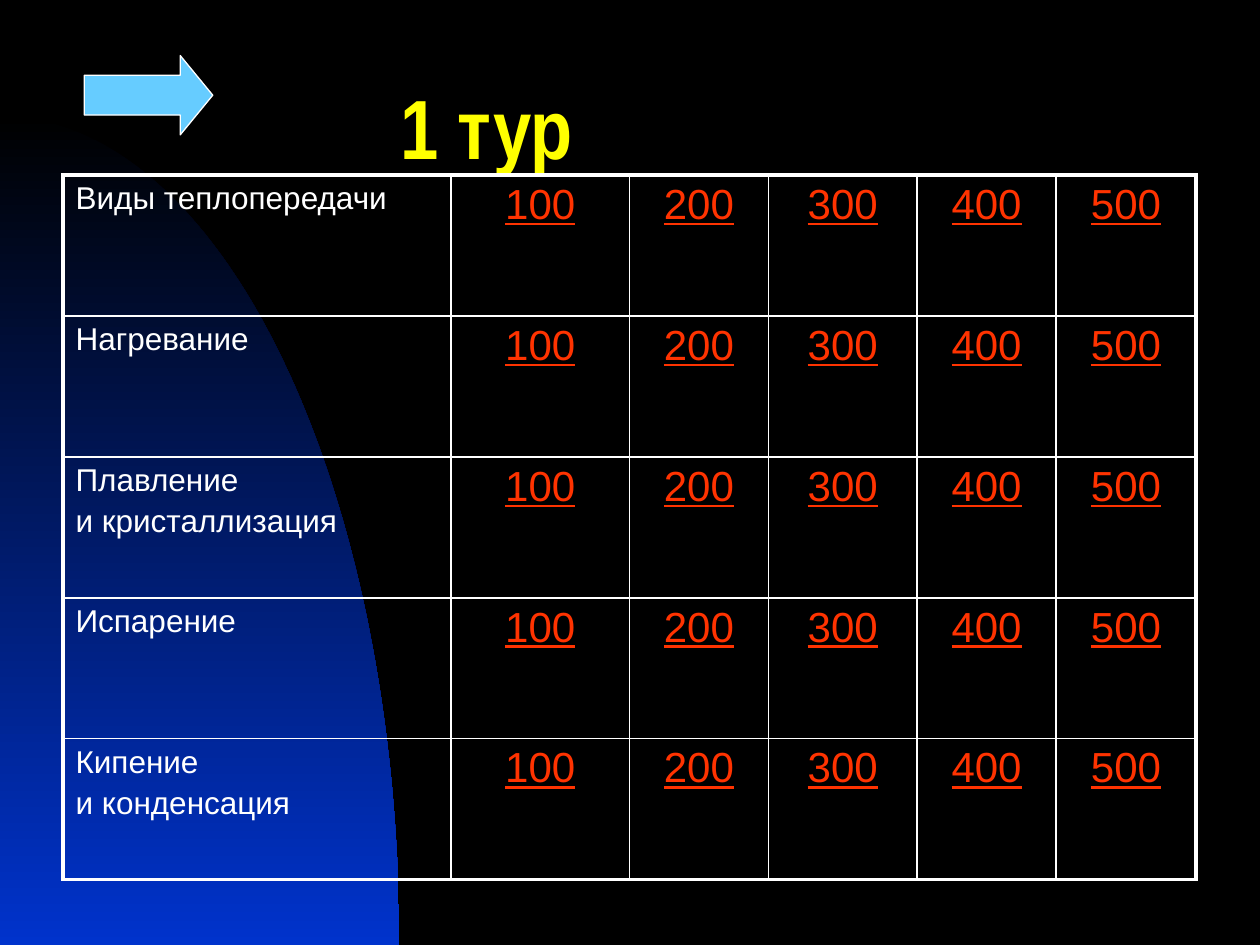
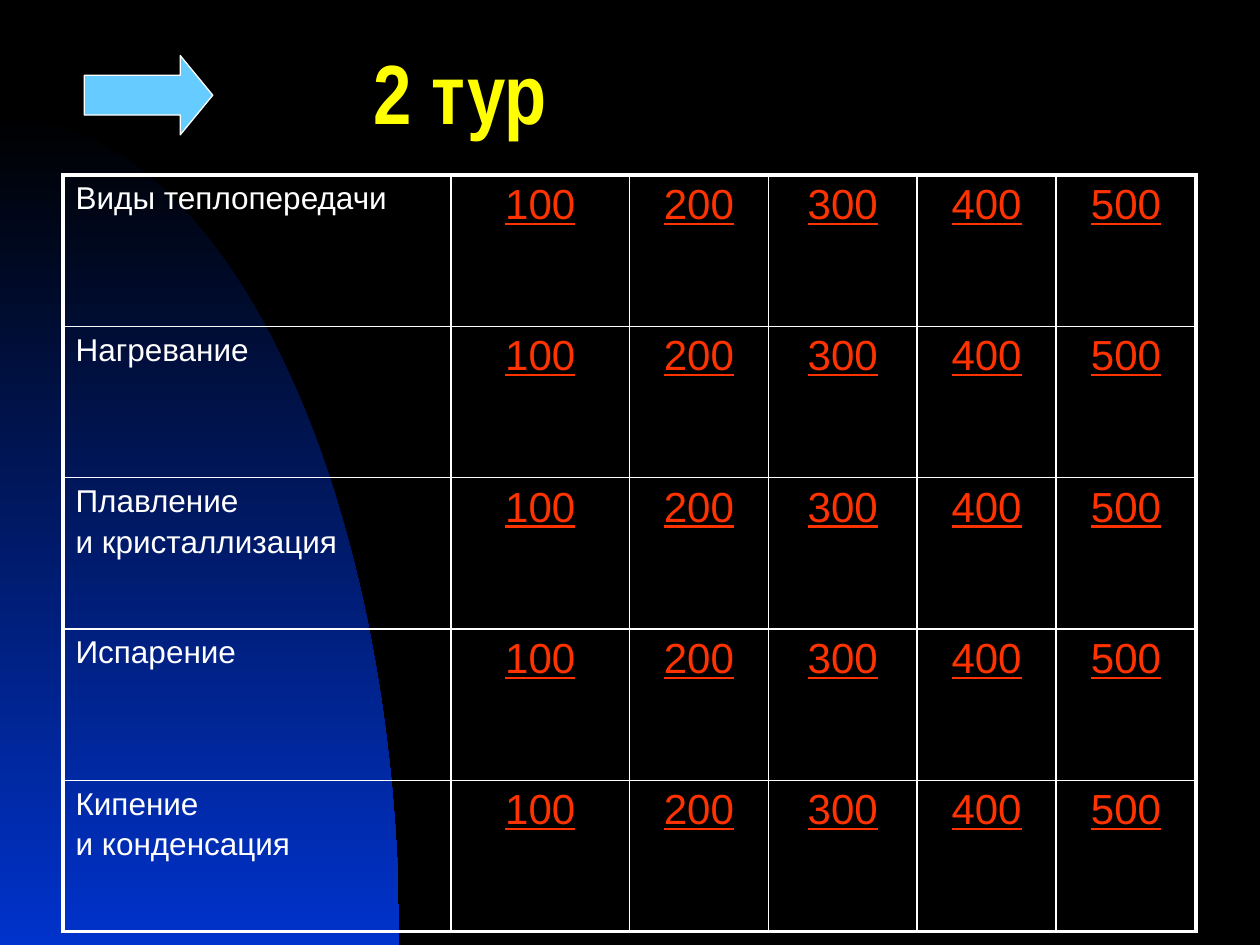
from math import cos, pi, sin

from lxml import etree
from pptx import Presentation
from pptx.dml.color import RGBColor
from pptx.enum.shapes import MSO_SHAPE
from pptx.enum.text import MSO_ANCHOR, PP_ALIGN
from pptx.oxml.ns import qn
from pptx.util import Cm, Pt

ARROW = MSO_SHAPE.RIGHT_ARROW
MIDDLE = MSO_ANCHOR.MIDDLE
LEFT, CENTER = PP_ALIGN.LEFT, PP_ALIGN.CENTER

# Shared look
BLACK, WHITE, BLUE = "000000", "FFFFFF", "0033CC"
YELLOW, RED, SKY = "FFFF00", "FF3300", "66CCFF"
WIDE, HIGH = 25.4, 19.05
THICK, THIN = 2.25, 1

# Game board
TOPICS = ["Виды теплопередачи", "Нагревание", "Плавление\nи кристаллизация",
          "Испарение", "Кипение\nи конденсация"]
PRICES = ["100", "200", "300", "400", "500"]
COLS = [7.82, 3.6, 2.8, 3, 2.8, 2.82]

# Round title, title box (left, top, height), table row height
ROUNDS = [("1 тур", (7.82, 1.7, 2.16), 2.84),
          ("2 тур", (7.29, 0.91, 2.36), 3.05)]


def rgb(code):
    return RGBColor.from_string(code)


def style(par, size, color, font, bold=False, under=False):
    for run in par.runs:
        face = run.font
        face.name, face.size = font, Pt(size)
        face.bold, face.underline = bold, under
        face.color.rgb = rgb(color)


def add_arc(slide):
    """Quarter ellipse rising from the bottom left corner."""
    top, width = 2.34, 8.05
    steps = 90
    turns = [pi / 2 * i / steps for i in range(steps + 1)]
    curve = [(Cm(width * sin(t)), Cm(HIGH - (HIGH - top) * cos(t)))
             for t in turns]
    pen = slide.shapes.build_freeform(*curve[0])
    pen.add_line_segments(curve[1:] + [(Cm(0), Cm(HIGH))], close=True)
    arc = pen.convert_to_shape()
    arc.shadow.inherit = False
    arc.line.fill.background()
    arc.fill.gradient()
    arc.fill.gradient_angle = 270
    for stop, code in zip(arc.fill.gradient_stops, (BLACK, BLUE)):
        stop.color.rgb = rgb(code)


def add_title(slide, text, place):
    left, top, high = place
    box = slide.shapes.add_textbox(Cm(left), Cm(top), Cm(16.94), Cm(high))
    frame = box.text_frame
    frame.word_wrap = True
    frame.vertical_anchor = MIDDLE
    frame.text = text
    par = frame.paragraphs[0]
    par.line_spacing = 0.7
    style(par, 48, YELLOW, "Arial Narrow", bold=True)


def set_edge(cell, side, width):
    props = cell._tc.get_or_add_tcPr()
    line = etree.SubElement(props, qn("a:ln" + side), w=str(Pt(width)))
    fill = etree.SubElement(line, qn("a:solidFill"))
    etree.SubElement(fill, qn("a:srgbClr"), val=WHITE)


def fill_cell(cell, text, size, color, align, under):
    cell.text_frame.text = text
    for i, par in enumerate(cell.text_frame.paragraphs):
        par.alignment = align
        if i:
            par.space_before = Pt(3)
        style(par, size, color, "Arial", under=under)


def add_board(slide, row_high):
    rows, cols = len(TOPICS), len(COLS)
    frame = slide.shapes.add_table(rows, cols, Cm(1.27), Cm(3.53),
                                   Cm(sum(COLS)), Cm(row_high * rows))
    table = frame.table
    table.first_row = table.horz_banding = False
    for col, width in zip(table.columns, COLS):
        col.width = Cm(width)
    for r, topic in enumerate(TOPICS):
        table.rows[r].height = Cm(row_high)
        for c, text in enumerate([topic] + PRICES):
            cell = table.cell(r, c)
            if c == 0:
                fill_cell(cell, text, 18, WHITE, LEFT, False)
            else:
                fill_cell(cell, text, 24, RED, CENTER, True)
            # Outer edges are thick, inner ones thin
            outer = {"L": c == 0, "R": c == cols - 1,
                     "T": r == 0, "B": r == rows - 1}
            for side, edge in outer.items():
                set_edge(cell, side, THICK if edge else THIN)
            cell.fill.background()


def add_arrow(slide):
    arrow = slide.shapes.add_shape(ARROW, Cm(1.7), Cm(1.12),
                                   Cm(2.59), Cm(1.6))
    arrow.shadow.inherit = False
    arrow.adjustments[1] = 0.41
    arrow.fill.solid()
    arrow.fill.fore_color.rgb = rgb(SKY)
    arrow.line.color.rgb = rgb(WHITE)
    arrow.line.width = Pt(0.75)


def main():
    prs = Presentation()
    prs.slide_width, prs.slide_height = Cm(WIDE), Cm(HIGH)
    back = prs.slide_master.background.fill
    back.solid()
    back.fore_color.rgb = rgb(BLACK)
    for title, place, row_high in ROUNDS:
        slide = prs.slides.add_slide(prs.slide_layouts[6])
        add_arc(slide)
        add_title(slide, title, place)
        add_board(slide, row_high)
        add_arrow(slide)
    prs.save("out.pptx")


if __name__ == "__main__":
    main()
